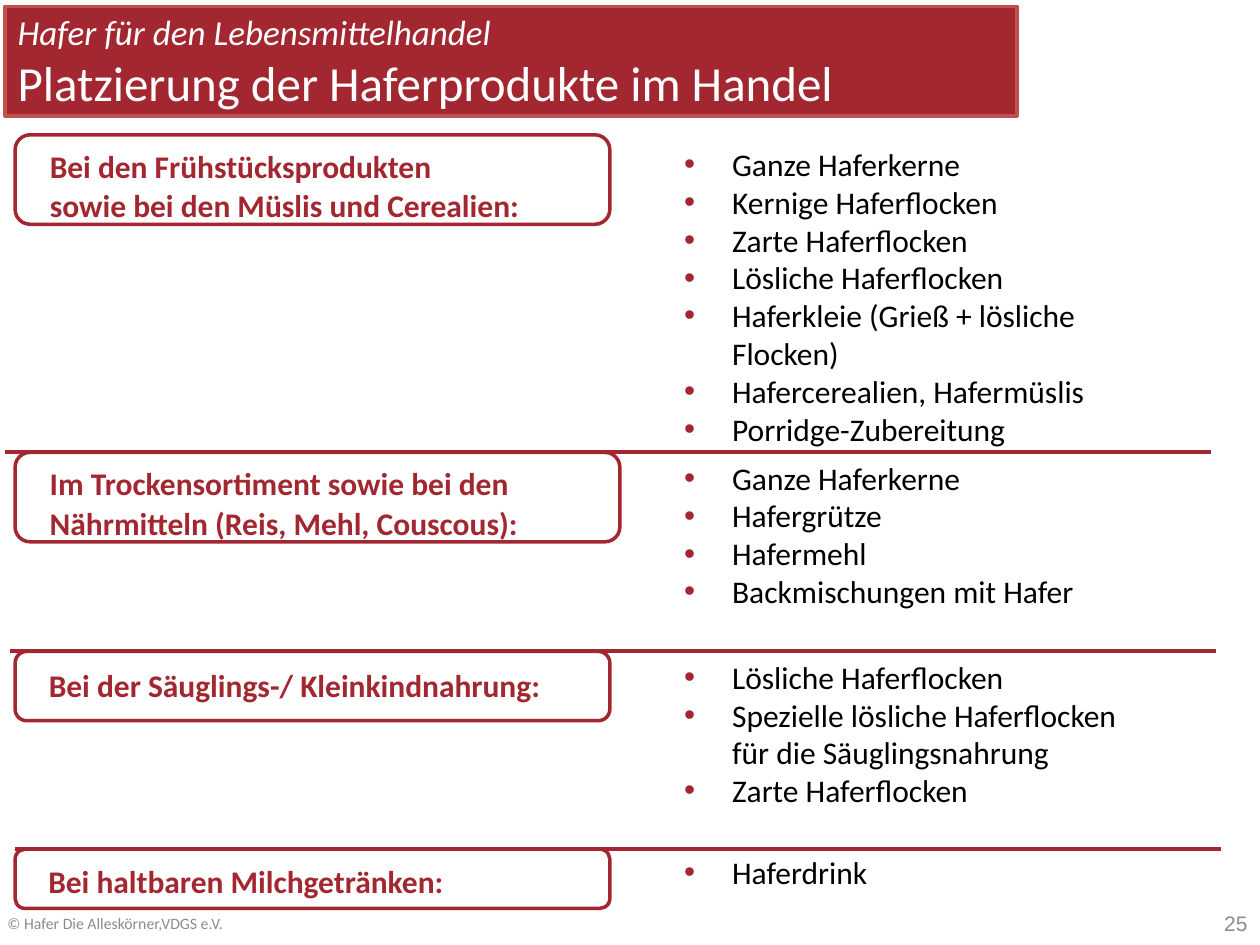
import pptx
import pptx.dml.color
import pptx.enum.shapes
import pptx.enum.text
import pptx.oxml
import pptx.oxml.ns
import pptx.util
import lxml.etree

Inches = pptx.util.Inches
Pt = pptx.util.Pt
ALIGN = pptx.enum.text.PP_ALIGN
ANCHOR = pptx.enum.text.MSO_ANCHOR

RED, BORDER, WHITE, BLACK, GREY = "A32730", "C0504D", "FFFFFF", "000000", "8C8C8C"

TITLE = [
    ("Hafer für den Lebensmittelhandel", 20, True),
    ("Platzierung der Haferprodukte im Handel", 28, False),
]
SECTIONS = [
    {
        "heading": ["Bei den Frühstücksprodukten", "sowie bei den Müslis und Cerealien:"],
        "products": [
            "Ganze Haferkerne", "Kernige Haferflocken", "Zarte Haferflocken",
            "Lösliche Haferflocken", "Haferkleie (Grieß + lösliche Flocken)",
            "Hafercerealien, Hafermüslis", "Porridge-Zubereitung",
        ],
        "top": 1.07, "box": (4.72, 0.71), "inset": 0.06, "list": (1.1, 3.55, 2.52),
    },
    {
        "heading": ["Im Trockensortiment sowie bei den", "Nährmitteln (Reis, Mehl, Couscous):"],
        "products": ["Ganze Haferkerne", "Hafergrütze", "Hafermehl", "Backmischungen mit Hafer"],
        "top": 3.59, "box": (4.8, 0.71), "inset": 0.06, "list": (3.59, 3.55, 1.5),
    },
    {
        "heading": ["Bei der Säuglings-/ Kleinkindnahrung:"],
        "products": [
            "Lösliche Haferflocken",
            "Spezielle lösliche Haferflocken für die Säuglingsnahrung",
            "Zarte Haferflocken",
        ],
        "top": 5.17, "box": (4.72, 0.55), "inset": 0.09, "list": (5.17, 3.98, 1.4),
    },
    {
        "heading": ["Bei haltbaren Milchgetränken:"],
        "products": ["Haferdrink"],
        "top": 6.74, "box": (4.72, 0.47), "inset": 0.08, "list": (6.72, 3.98, 0.45),
    },
]


def color(value):
    return pptx.dml.color.RGBColor.from_string(value)


def place(shape, left, top, width, height):
    shape.left, shape.top = Inches(left), Inches(top)
    shape.width, shape.height = Inches(width), Inches(height)


def paint(shape, fill, line):
    shape.fill.solid()
    shape.fill.fore_color.rgb = color(fill)
    shape.line.color.rgb = color(line)
    shape.line.width = Pt(2)


def prepare(shape, anchor=ANCHOR.TOP, left=0.1, top=0.05):
    frame = shape.text_frame
    frame.word_wrap = True
    frame.auto_size = pptx.enum.text.MSO_AUTO_SIZE.NONE
    frame.vertical_anchor = anchor
    frame.margin_left, frame.margin_right = Inches(left), Inches(0.1)
    frame.margin_top = frame.margin_bottom = Inches(top)
    return frame


def add_bullet(paragraph):
    properties = paragraph._p.get_or_add_pPr()
    properties.set("marL", str(Inches(0.44)))
    properties.set("indent", str(Inches(-0.38)))
    namespace = pptx.oxml.ns.nsdecls("a")
    for markup in (
        f'<a:buClr {namespace}><a:srgbClr val="{RED}"/></a:buClr>',
        f'<a:buFont {namespace} typeface="Arial"/>',
        f'<a:buChar {namespace} char="•"/>',
    ):
        properties.append(pptx.oxml.parse_xml(markup))


def write(frame, text, size=18, fill=BLACK, name="Calibri", bold=False, italic=False,
          align=ALIGN.LEFT, before=0, bullet=False):
    paragraph = frame.add_paragraph() if frame.text else frame.paragraphs[0]
    if bullet:
        add_bullet(paragraph)
    paragraph.alignment = align
    paragraph.space_before = Pt(before)
    run = paragraph.add_run()
    run.text = text
    run.font.size, run.font.name = Pt(size), name
    run.font.bold, run.font.italic = bold, italic
    run.font.color.rgb = color(fill)


def add_heading(slide, section):
    box = slide.shapes.add_shape(
        pptx.enum.shapes.MSO_SHAPE.ROUNDED_RECTANGLE, 0, 0, 0, 0)
    place(box, 0.12, section["top"], *section["box"])
    paint(box, WHITE, RED)
    box.shadow.inherit = False
    frame = prepare(box, left=0.24, top=section["inset"])
    for index, text in enumerate(section["heading"]):
        write(frame, text, fill=RED, bold=True, before=min(index, 1))


def add_products(placeholder, section):
    top, width, height = section["list"]
    place(placeholder, 5.27, top, width, height)
    frame = prepare(placeholder)
    for product in section["products"]:
        write(frame, product, bullet=True)


def add_divider(slide, left, top):
    line = slide.shapes.add_connector(
        pptx.enum.shapes.MSO_CONNECTOR.STRAIGHT,
        Inches(left), Inches(top), Inches(left + 9.57), Inches(top))
    line.line.color.rgb = color(RED)
    line.line.width = Pt(2.25)
    lxml.etree.SubElement(line._element.spPr, pptx.oxml.ns.qn("a:effectLst"))


def add_footer(slide, text, left, width, **style):
    box = slide.shapes.add_textbox(Inches(left), Inches(7.13), Inches(width), Inches(0.4))
    write(prepare(box, ANCHOR.MIDDLE, left=0.06), text, fill=GREY, **style)


def main():
    presentation = pptx.Presentation()
    presentation.slide_width, presentation.slide_height = Inches(10), Inches(7.5)
    comparison_layout = presentation.slide_layouts[4]
    slide = presentation.slides.add_slide(comparison_layout)

    title, *lists = slide.placeholders
    place(title, 0.04, 0.05, 8.03, 0.87)
    paint(title, RED, BORDER)
    frame = prepare(title, ANCHOR.MIDDLE, top=0)
    for text, size, italic in TITLE:
        write(frame, text, size=size, fill=WHITE, italic=italic)

    for placeholder, section in zip(lists, SECTIONS):
        add_heading(slide, section)
        add_products(placeholder, section)
    for index, section in enumerate(SECTIONS[1:]):
        add_divider(slide, 0.04 * (index + 1), section["top"])

    add_footer(slide, "© Hafer Die Alleskörner,VDGS e.V.", 0, 6.07, size=9)
    add_footer(slide, "25", 7.68, 2.32, size=12, name="Arial", align=ALIGN.RIGHT)
    presentation.save("out.pptx")


if __name__ == "__main__":
    main()
